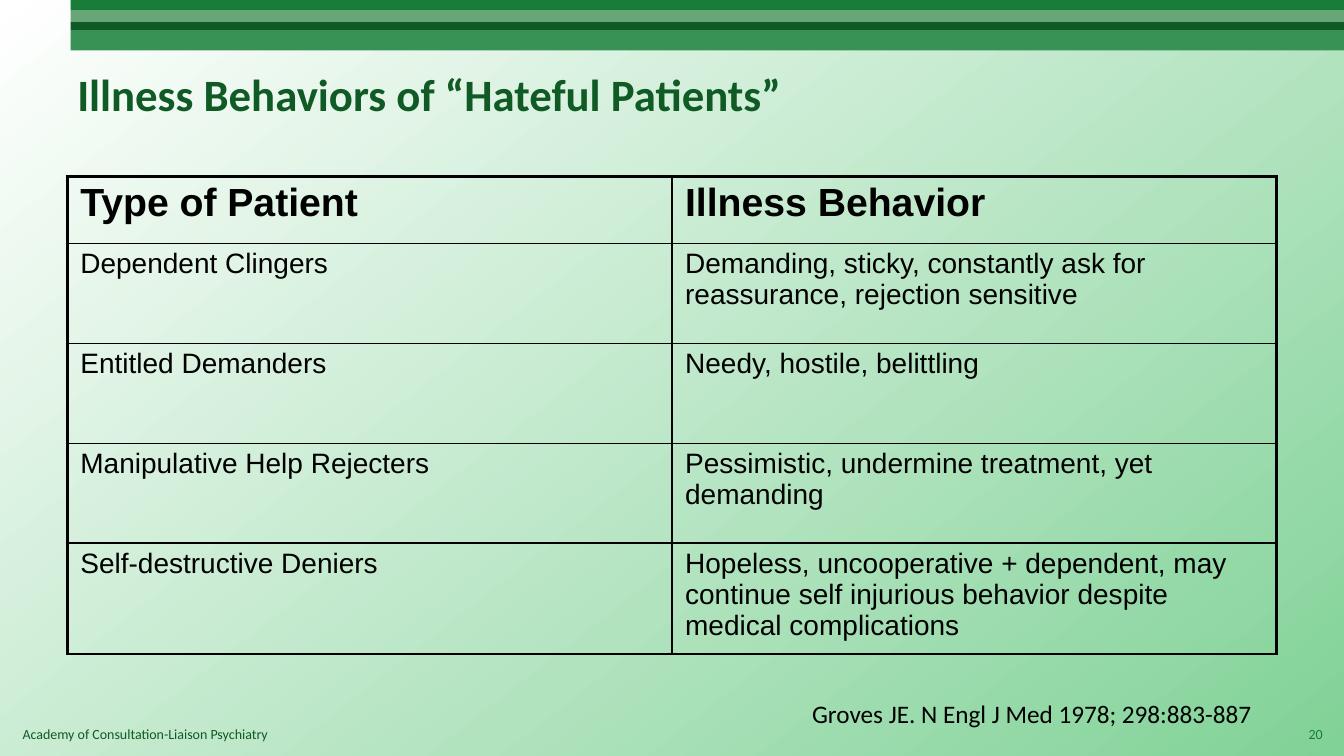
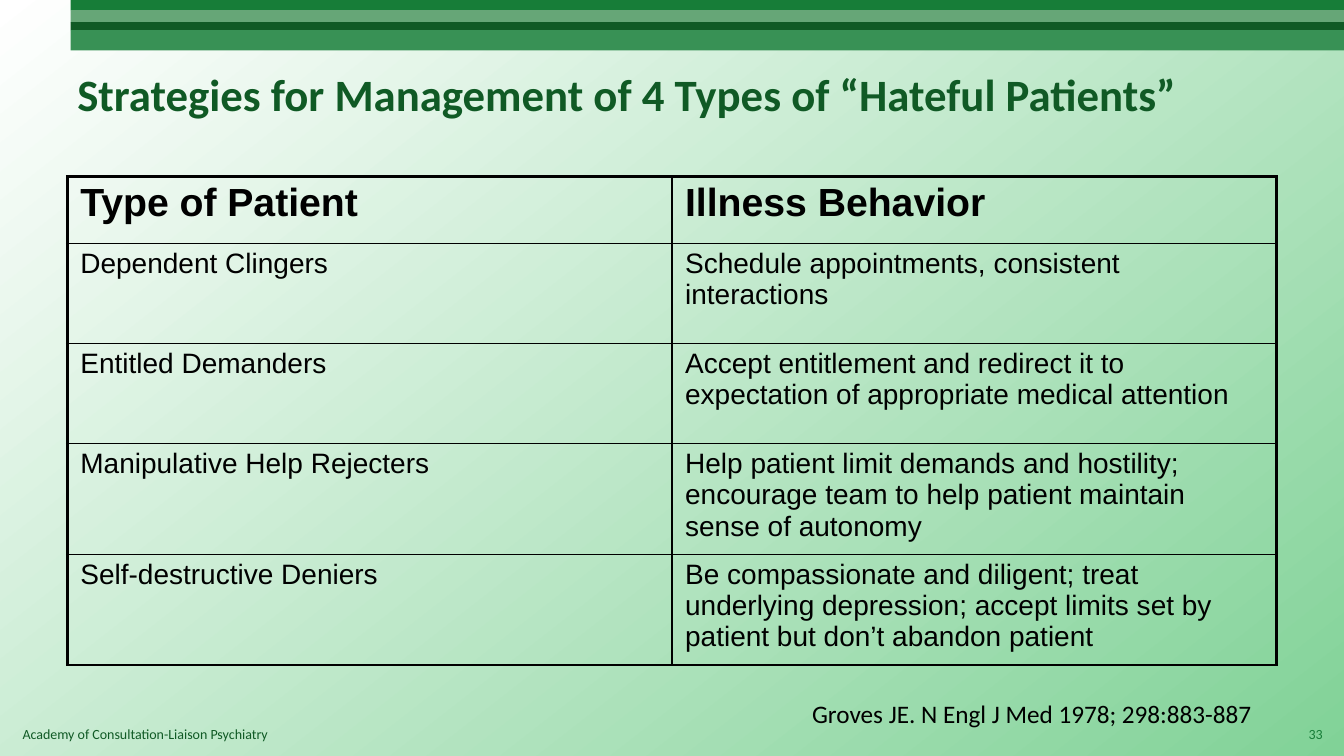
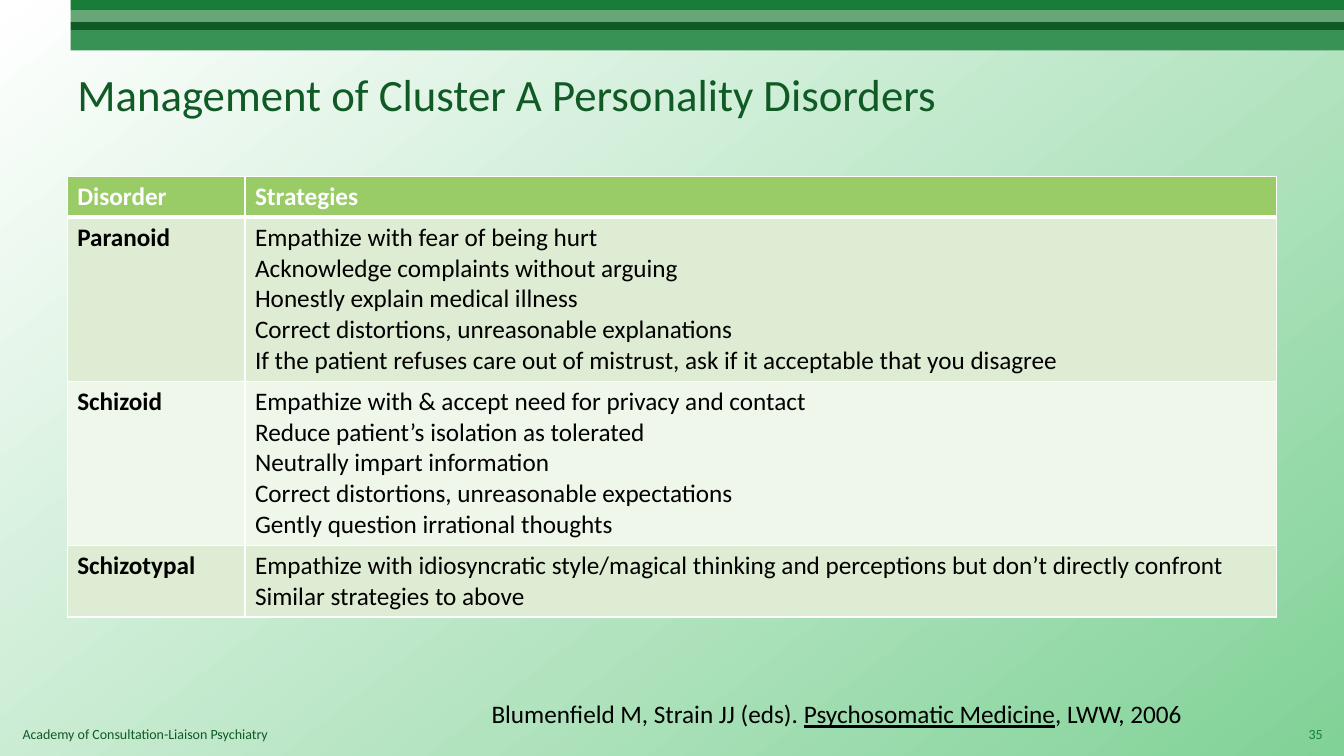
import itertools

import pptx
import pptx.dml.color
import pptx.enum.shapes
import pptx.enum.text
import pptx.oxml
import pptx.oxml.ns
import pptx.util

Pt = pptx.util.Pt
RGBColor = pptx.dml.color.RGBColor
ALIGN = pptx.enum.text.PP_ALIGN
ANCHOR = pptx.enum.text.MSO_ANCHOR

# Shared look
SLIDE_W, SLIDE_H = 960, 540
MARGIN, TABLE_TOP, TABLE_W = 48, 126, 864
BODY_FONT, GRID_FONT = "Calibri", "Arial"

BLACK = RGBColor(0x00, 0x00, 0x00)
WHITE = RGBColor(0xFF, 0xFF, 0xFF)
BACK_GREEN = RGBColor(0x81, 0xD2, 0x97)
DARK_GREEN = RGBColor(0x10, 0x5A, 0x25)
GREEN = RGBColor(0x17, 0x7D, 0x38)
PALE_GREEN = RGBColor(0x66, 0xA6, 0x77)
MID_GREEN = RGBColor(0x38, 0x91, 0x55)
HEADER_LIME = RGBColor(0x99, 0xCC, 0x66)
ROW_TINTS = [RGBColor(0xDE, 0xEC, 0xD3), RGBColor(0xEF, 0xF6, 0xEA)]

BAND_LEFT = 50.4
BAND_EDGES = [0, 7.2, 15.8, 21.6, 36]
BAND_COLORS = [GREEN, PALE_GREEN, DARK_GREEN, MID_GREEN]

# Content
PATIENT_HEADER = ("Type of Patient", "Illness Behavior")
PATIENT_TYPES = ["Dependent Clingers", "Entitled Demanders",
                 "Manipulative Help Rejecters", "Self-destructive Deniers"]
BEHAVIORS = [
    "Demanding, sticky, constantly ask for reassurance, rejection sensitive",
    "Needy, hostile, belittling",
    "Pessimistic, undermine treatment, yet demanding",
    "Hopeless, uncooperative + dependent, may continue self injurious "
    "behavior despite medical complications",
]
MANAGEMENT = [
    "Schedule appointments, consistent interactions",
    "Accept entitlement and redirect it to expectation of appropriate "
    "medical attention",
    "Help patient limit demands and hostility; encourage team to help "
    "patient maintain sense of autonomy",
    "Be compassionate and diligent; treat underlying depression; accept "
    "limits set by patient but don’t abandon patient",
]
DISORDERS = [
    ("Disorder", ["Strategies"]),
    ("Paranoid", [
        "Empathize with fear of being hurt",
        "Acknowledge complaints without arguing",
        "Honestly explain medical illness",
        "Correct distortions, unreasonable explanations",
        "If the patient refuses care out of mistrust, ask if it acceptable "
        "that you disagree"]),
    ("Schizoid", [
        "Empathize with & accept need for privacy and contact",
        "Reduce patient’s isolation as tolerated",
        "Neutrally impart information",
        "Correct distortions, unreasonable expectations",
        "Gently question irrational thoughts"]),
    ("Schizotypal", [
        "Empathize with idiosyncratic style/magical thinking and perceptions "
        "but don’t directly confront",
        "Similar strategies to above"]),
]
GROVES = ["Groves JE. N Engl J Med 1978; 298:883-887"]
BLUMENFIELD = ["Blumenfield M, Strain JJ (eds). ", "Psychosomatic Medicine",
               ", LWW, 2006"]


def format_text(tf, size, color, bold=False, font=BODY_FONT, align=ALIGN.LEFT):
    for p in tf.paragraphs:
        p.alignment = align
        for r in p.runs:
            r.font.name = font
            r.font.size = Pt(size)
            r.font.bold = bold
            r.font.color.rgb = color


def add_text(s, box, parts, size, color, align=ALIGN.LEFT, anchor=ANCHOR.TOP):
    """Add one line of text; every second part is underlined."""
    sp = s.shapes.add_textbox(*map(Pt, box))
    tf = sp.text_frame
    tf.word_wrap = True
    tf.vertical_anchor = anchor
    for i, part in enumerate(parts):
        r = tf.paragraphs[0].add_run()
        r.text = part
        r.font.underline = i % 2 == 1
    format_text(tf, size, color, align=align)
    return sp


def add_band(s, top, bottom, color):
    sp = s.shapes.add_shape(
        pptx.enum.shapes.MSO_SHAPE.RECTANGLE, Pt(BAND_LEFT), Pt(top),
        Pt(SLIDE_W - BAND_LEFT), Pt(bottom - top))
    sp.shadow.inherit = False
    sp.fill.solid()
    sp.fill.fore_color.rgb = color
    sp.line.fill.background()
    return sp


def set_background(master):
    fill = master.background.fill
    fill.gradient()
    fill.gradient_angle = 308
    for stop, color in zip(fill.gradient_stops, (WHITE, BACK_GREEN)):
        stop.color.rgb = color


def furnish_layout(s):
    """Draw the bands and footer on a slide, then hand them to its layout."""
    shapes = [add_band(s, top, bottom, color) for (top, bottom), color
              in zip(itertools.pairwise(BAND_EDGES), BAND_COLORS)]
    shapes.append(add_text(s, (9, 515, 666, 19.5),
                           ["Academy of Consultation-Liaison Psychiatry"],
                           10, DARK_GREEN))
    for shape_id, sp in enumerate(shapes, 101):
        sp._element.xpath(".//p:cNvPr")[0].set("id", str(shape_id))
        s.slide_layout.shapes._spTree.append(sp._element)


def add_slide(prs, title, number, citation, citation_left, bold=True):
    s = prs.slides.add_slide(prs.slide_layouts[5])
    sp = s.shapes.title
    sp.left, sp.top, sp.width, sp.height = map(Pt, (MARGIN, 21.6, TABLE_W, 90))
    tf = sp.text_frame
    tf.text = title
    tf.vertical_anchor = ANCHOR.MIDDLE
    format_text(tf, 32, DARK_GREEN, bold)
    add_text(s, (913.7, 510, 38.2, 28.8), [str(number)], 10, GREEN,
             ALIGN.RIGHT, ANCHOR.MIDDLE)
    add_text(s, (citation_left, 495.5, SLIDE_W - citation_left, 29),
             citation, 18, BLACK)
    return s


def set_borders(cell, color, left, right, top, bottom):
    tc_pr = cell._tc.get_or_add_tcPr()
    for side, width in zip("LRTB", (left, right, top, bottom)):
        tc_pr.append(pptx.oxml.parse_xml(
            f'<a:ln{side} {pptx.oxml.ns.nsdecls("a")} w="{Pt(width)}">'
            f'<a:solidFill><a:srgbClr val="{color}"/></a:solidFill>'
            f'</a:ln{side}>'))


def add_table(s, col_widths, row_heights):
    frame = s.shapes.add_table(
        len(row_heights), len(col_widths), Pt(MARGIN), Pt(TABLE_TOP),
        Pt(sum(col_widths)), Pt(sum(row_heights)))
    table = frame.table
    table.horz_banding = False
    for col, width in zip(table.columns, col_widths):
        col.width = Pt(width)
    for row, height in zip(table.rows, row_heights):
        row.height = Pt(height)
    return table


def add_patient_table(s, answers):
    """Unfilled black grid with a heavy outer frame."""
    rows = [PATIENT_HEADER, *zip(PATIENT_TYPES, answers)]
    last = len(rows) - 1
    table = add_table(s, [TABLE_W / 2] * 2, [47.8] + [71.4] * last)
    for i, row in enumerate(rows):
        for j, text in enumerate(row):
            cell = table.cell(i, j)
            cell.text_frame.text = text
            cell.margin_left = cell.margin_right = Pt(9.4)
            header = i == 0
            format_text(cell.text_frame, 28 if header else 20, BLACK, header,
                        GRID_FONT)
            set_borders(cell, BLACK, *(2.25 if outer else 1 for outer in
                                       (j == 0, j == 1, header, i == last)))
            cell.fill.background()


def add_disorder_table(s):
    """Tinted rows, each as tall as its lines."""
    table = add_table(s, [127, TABLE_W - 127],
                      [7.2 + 22 * len(lines) for _, lines in DISORDERS])
    for i, (disorder, strategies) in enumerate(DISORDERS):
        header = i == 0
        for j, text in enumerate((disorder, "\n".join(strategies))):
            cell = table.cell(i, j)
            cell.text_frame.text = text
            format_text(cell.text_frame, 18, WHITE if header else BLACK,
                        header or j == 0)
            set_borders(cell, WHITE, 1, 1, 3 if i == 1 else 1,
                        3 if header else 1)
            cell.fill.solid()
            cell.fill.fore_color.rgb = (
                HEADER_LIME if header else ROW_TINTS[(i - 1) % 2])


def main():
    prs = pptx.Presentation()
    prs.slide_width, prs.slide_height = Pt(SLIDE_W), Pt(SLIDE_H)
    set_background(prs.slide_master)

    # Illness behaviors
    s = add_slide(prs, "Illness Behaviors of “Hateful Patients”", 20,
                  GROVES, 573)
    furnish_layout(s)
    add_patient_table(s, BEHAVIORS)

    # Management strategies
    s = add_slide(prs,
                  "Strategies for Management of 4 Types of “Hateful Patients”",
                  33, GROVES, 573)
    add_patient_table(s, MANAGEMENT)

    # Cluster A
    s = add_slide(prs, "Management of Cluster A Personality Disorders", 35,
                  BLUMENFIELD, 344, bold=False)
    add_disorder_table(s)

    prs.save("out.pptx")


if __name__ == "__main__":
    main()
